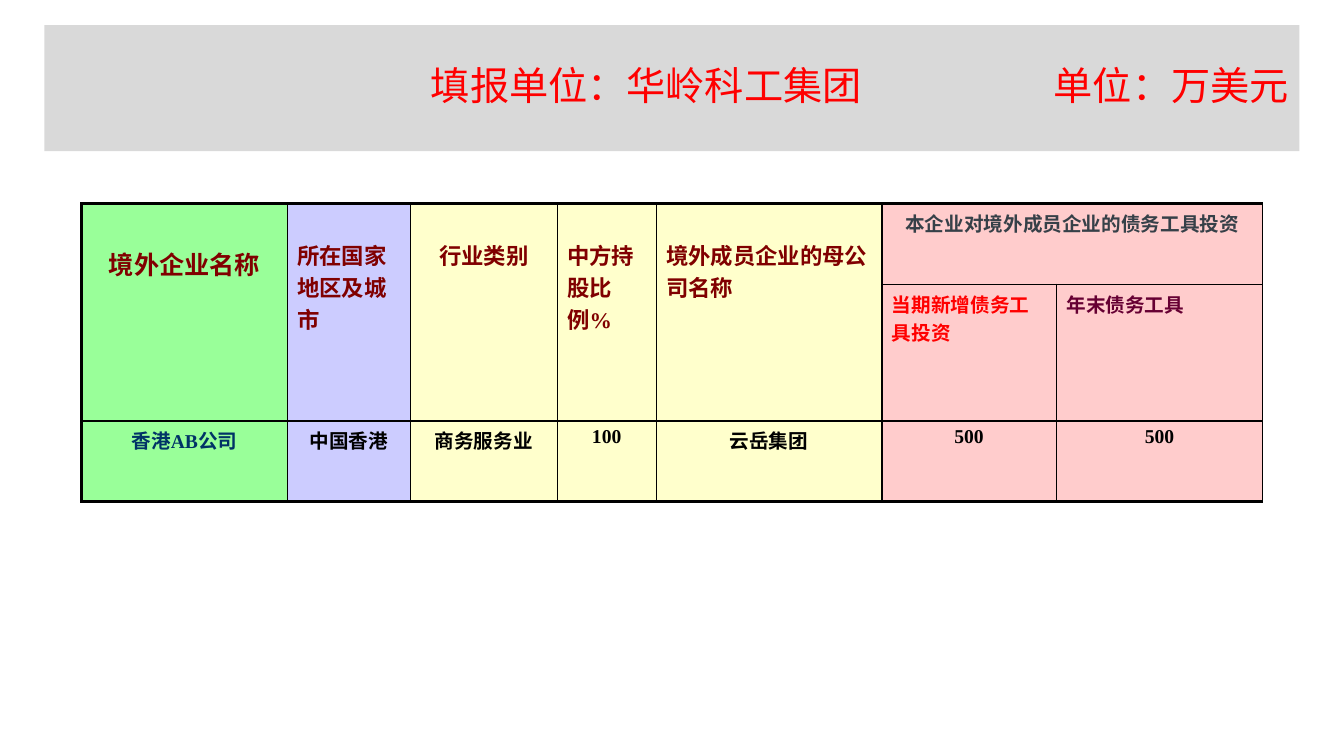
from lxml.etree import SubElement
from pptx import Presentation
from pptx.dml.color import RGBColor
from pptx.enum.shapes import MSO_SHAPE
from pptx.enum.text import MSO_ANCHOR, PP_ALIGN
from pptx.oxml.ns import qn
from pptx.util import Pt

BLACK = RGBColor(0, 0, 0)
RED = RGBColor(0xFF, 0, 0)
MAROON = RGBColor(0x80, 0, 0)
PLUM = RGBColor(0x66, 0, 0x33)
NAVY = RGBColor(0, 0x33, 0x66)
SLATE = RGBColor(0x36, 0x40, 0x48)
GRAY = RGBColor(0xD9, 0xD9, 0xD9)
GREEN = RGBColor(0x99, 0xFF, 0x99)
LILAC = RGBColor(0xCC, 0xCC, 0xFF)
CREAM = RGBColor(0xFF, 0xFF, 0xCC)
PINK = RGBColor(0xFF, 0xCC, 0xCC)

LEFT, MID = PP_ALIGN.LEFT, PP_ALIGN.CENTER
WIDTHS = [146.9, 87.8, 105.1, 70.6, 161.3, 124.6, 147.5]
HEIGHTS = [57.6, 97.2, 57.6]
FILLS = [GREEN, LILAC, CREAM, CREAM, CREAM, PINK, PINK]

# Tall headings: text, size, alignment, top margin
HEADS = [
    ("境外企业名称", 18, MID, 30),
    ("所在国家地区及城市", 16, LEFT, 25),
    ("行业类别", 16, MID, 25),
    ("中方持股比例%", 16, LEFT, 25),
    ("境外成员企业的母公司名称", 16, LEFT, 25),
]
VALUES = ["香港AB公司", "中国香港", "商务服务业", "100", "云岳集团", "500", "500"]


class Deck:
    def __init__(self):
        self.prs = Presentation()
        self.prs.slide_width, self.prs.slide_height = Pt(960), Pt(540)
        self.slide = self.prs.slides.add_slide(self.prs.slide_layouts[6])

    def label(self, para, text, size, color, font="Times New Roman", bold=True):
        run = para.add_run()
        run.text = text
        run.font.name, run.font.size, run.font.bold = font, Pt(size), bold
        run.font.color.rgb = color

    def banner(self, left, top, width, height, parts):
        """Draw a filled bar; each part is a text with its tab stop."""
        bar = self.slide.shapes.add_shape(
            MSO_SHAPE.RECTANGLE, Pt(left), Pt(top), Pt(width), Pt(height))
        bar.shadow.inherit = False
        bar.fill.solid()
        bar.fill.fore_color.rgb = GRAY
        bar.line.fill.background()
        frame = bar.text_frame
        frame.word_wrap = True
        frame.vertical_anchor = MSO_ANCHOR.MIDDLE
        frame.margin_right = 0
        para = frame.paragraphs[0]
        para.alignment, para.line_spacing = LEFT, 0.9
        stops = SubElement(para._p.get_or_add_pPr(), qn("a:tabLst"))
        for text, stop in parts:
            SubElement(stops, qn("a:tab"), pos=str(Pt(stop)), algn="l")
            self.label(para, "\t" + text, 28, RED, "Arial", False)

    def grid(self, left, top, widths, heights, fills):
        frame = self.slide.shapes.add_table(
            len(heights), len(widths), Pt(left), Pt(top),
            Pt(sum(widths)), Pt(sum(heights)))
        table = frame.table
        table.first_row = table.horz_banding = False
        for col, width in zip(table.columns, widths):
            col.width = Pt(width)
        last = len(heights) - 1
        for r, height in enumerate(heights):
            table.rows[r].height = Pt(height)
            for c, fill in enumerate(fills):
                cell = table.cell(r, c)
                self.border(cell, L=c == 0, R=False, T=r == 0, B=r == last)
                cell.fill.solid()
                cell.fill.fore_color.rgb = fill
        return table

    def border(self, cell, **sides):
        """Line each side; True marks a thick one."""
        props = cell._tc.get_or_add_tcPr()
        for side, thick in sides.items():
            line = SubElement(props, qn("a:ln" + side),
                              w=str(Pt(2.25 if thick else 1)))
            fill = SubElement(line, qn("a:solidFill"))
            SubElement(fill, qn("a:srgbClr"), val=str(BLACK))

    def fill(self, cell, text, size, color, align=MID, top=3.6):
        cell.margin_top = Pt(top)
        para = cell.text_frame.paragraphs[0]
        para.alignment = align
        self.label(para, text, size, color)


def main():
    deck = Deck()
    table = deck.grid(58.3, 145.4, WIDTHS, HEIGHTS, FILLS)
    for c, (text, size, align, top) in enumerate(HEADS):
        table.cell(0, c).merge(table.cell(1, c))
        deck.fill(table.cell(0, c), text, size, MAROON, align, top)
    table.cell(0, 5).merge(table.cell(0, 6))
    deck.fill(table.cell(0, 5), "本企业对境外成员企业的债务工具投资", 14, SLATE)
    deck.fill(table.cell(1, 5), "当期新增债务工具投资", 14, RED, LEFT)
    deck.fill(table.cell(1, 6), "年末债务工具", 14, PLUM, LEFT)
    for c, text in enumerate(VALUES):
        deck.fill(table.cell(2, c), text, 14, BLACK if c else NAVY)
    deck.banner(31.7, 18, 896.4, 90,
                [("填报单位：华岭科工集团", 269), ("单位：万美元", 714)])
    deck.prs.save("out.pptx")


if __name__ == "__main__":
    main()
